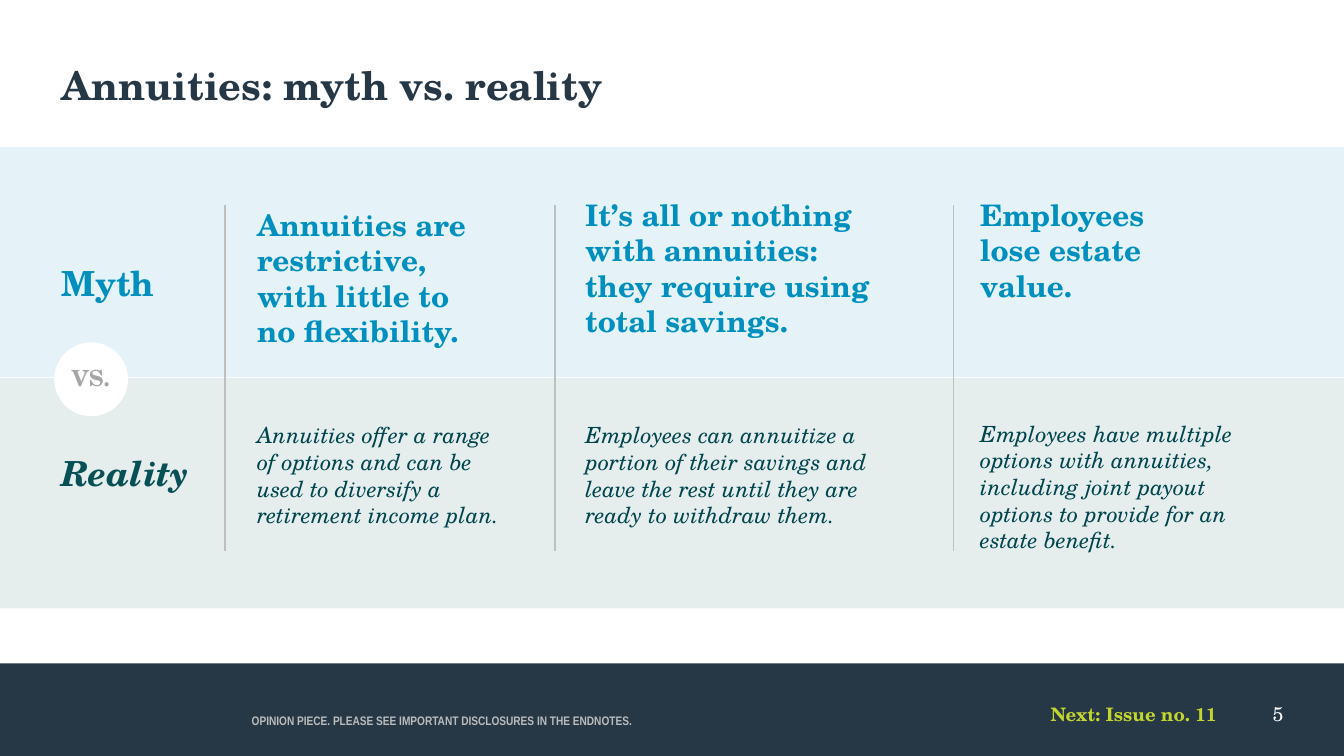
from pptx import Presentation
from pptx.dml.color import RGBColor
from pptx.enum.shapes import MSO_CONNECTOR as Line, MSO_SHAPE as Shape
from pptx.enum.text import MSO_ANCHOR as Anchor, PP_ALIGN as Align
from pptx.oxml.ns import qn
from pptx.util import Inches, Pt
from lxml import etree

NAVY = RGBColor(0x26, 0x37, 0x46)
BLUE = RGBColor(0x00, 0x8F, 0xBE)
TEAL = RGBColor(0x07, 0x51, 0x56)
DEEP = RGBColor(0x00, 0x45, 0x4E)
LIME = RGBColor(0xC3, 0xD6, 0x2E)
RULE = RGBColor(0xBF, 0xBF, 0xBF)
PALE = RGBColor(0xBA, 0xBC, 0xBC)
GRAY = RGBColor(0xA6, 0xA6, 0xA6)
WHITE = RGBColor(0xFF, 0xFF, 0xFF)
SERIF = "TeX Gyre Schola"

# Grid, in inches
WIDE, HIGH = 15.11, 8.5
EDGE = 0.69
TOP, BAND = 1.65, 2.59
FOOT = 7.46

deck = Presentation()
deck.slide_width, deck.slide_height = Inches(WIDE), Inches(HIGH)
slide = deck.slides.add_slide(deck.slide_layouts[5])
shapes = slide.shapes


def block(kind, x, y, w, h, color, alpha=100):
    shape = shapes.add_shape(kind, *map(Inches, (x, y, w, h)))
    shape.shadow.inherit = False
    shape.line.fill.background()
    shape.fill.solid()
    shape.fill.fore_color.rgb = color
    if alpha < 100:
        tint = shape.fill._xPr.find(qn("a:solidFill"))[0]
        etree.SubElement(tint, qn("a:alpha")).set("val", str(alpha * 1000))


def write(text, x, y, w, h, size, color, bold=False, italic=False,
          font=SERIF, align=Align.LEFT, anchor=Anchor.TOP, box=None):
    box = box or shapes.add_textbox(0, 0, 0, 0)
    box.left, box.top, box.width, box.height = map(Inches, (x, y, w, h))
    frame = box.text_frame
    frame.word_wrap = True
    frame.vertical_anchor = anchor
    frame.margin_left = frame.margin_right = 0
    frame.margin_top = frame.margin_bottom = 0
    frame.text = text
    para = frame.paragraphs[0]
    para.alignment = align
    face = para.font
    face.name, face.size = font, Pt(size)
    face.bold, face.italic = bold, italic
    face.color.rgb = color


# Footer
block(Shape.RECTANGLE, 0, FOOT, WIDE, HIGH - FOOT, NAVY)
write("5", 14.03, 7.89, 0.4, 0.33, 16, WHITE, align=Align.RIGHT)
write("OPINION PIECE. PLEASE SEE IMPORTANT DISCLOSURES IN THE ENDNOTES.",
      2.83, 7.76, 4.5, 0.42, 10, PALE, bold=True,
      font="Arial Narrow", anchor=Anchor.BOTTOM)
write("Next: Issue no. 11", 7.5, 7.9, 6.18, 0.42, 15, LIME, bold=True,
      align=Align.RIGHT)

# Bands
for row, color in enumerate((BLUE, TEAL)):
    block(Shape.RECTANGLE, 0, TOP + row * (BAND + 0.01), WIDE, BAND, color, 10)

# Title
write("Annuities: myth vs. reality", EDGE, EDGE, WIDE - 2 * EDGE, 1.13,
      32, NAVY, bold=True, box=shapes.title)

# Columns: rule, text left, then top, width and text of myth and reality
columns = [
    (2.53, 2.89,
     (2.32, 2.5, "Annuities are restrictive, with little to no flexibility."),
     (4.74, 2.84, "Annuities offer a range of options and can be used to "
                  "diversify a retirement income plan.")),
    (6.24, 6.58,
     (2.21, 3.33, "It’s all or nothing with annuities: they require using "
                  "total savings."),
     (4.74, 3.19, "Employees can annuitize a portion of their savings and "
                  "leave the rest until they are ready to withdraw them.")),
    (10.72, 11.02,
     (2.21, 2.27, "Employees lose estate value."),
     (4.72, 3.02, "Employees have multiple options with annuities, including "
                  "joint payout options to provide for an estate benefit.")),
]
for rule, left, myth, real in columns:
    y, w, text = myth
    write(text, left, y, w, 1.58, 24, BLUE, bold=True)
    y, w, text = real
    write(text, left, y, w, 1.58, 18, DEEP, italic=True)
    line = shapes.add_connector(
        Line.STRAIGHT, *map(Inches, (rule, 2.31, rule, 6.19)))
    line.line.color.rgb = RULE
    line.line.width = Pt(1)
    etree.SubElement(line._element.spPr, qn("a:effectLst"))

# Row labels
write("Myth", EDGE, 2.95, 1.5, 0.75, 28, BLUE, bold=True)
write("Reality", EDGE, 5.08, 1.5, 0.75, 28, TEAL, bold=True, italic=True)

# Badge between the rows
block(Shape.OVAL, 0.61, 3.85, 0.83, 0.83, WHITE)
write("VS.", 0.81, 4.1, 0.63, 0.59, 18, GRAY, bold=True)

deck.save("out.pptx")
